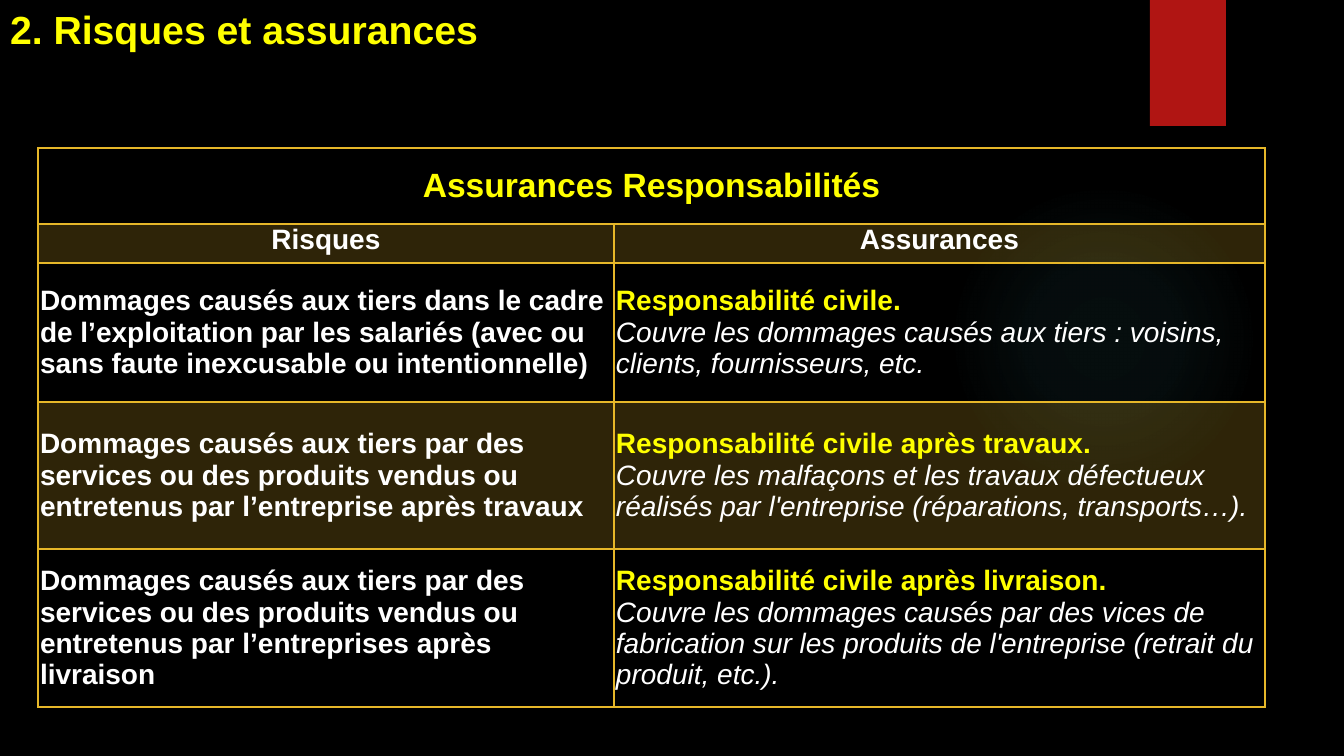
import pptx
import pptx.util
import pptx.dml.color
import pptx.enum.shapes
import pptx.enum.text
import pptx.oxml
import pptx.oxml.ns

PX = 914400 / 100.8
HUE = {"back": "000000", "glow": "50B9C1", "red": "B01513",
       "gold": "E6B729", "head": "FFFF00", "text": "FFFFFF"}
FONT = "Arial"
NS = pptx.oxml.ns.nsdecls("a")
ALIGN = pptx.enum.text.PP_ALIGN
ANCHOR = pptx.enum.text.MSO_ANCHOR
KIND = pptx.enum.shapes.MSO_SHAPE


def px(*nums):
    return [pptx.util.Emu(round(n * PX)) for n in nums]


def write(para, text, size, hue, bold=True):
    """Add one run; text that is not bold is italic."""
    run = para.add_run()
    run.text = text
    font = run.font
    font.name, font.size = FONT, pptx.util.Pt(size)
    font.bold, font.italic = bold, not bold
    font.color.rgb = pptx.dml.color.RGBColor.from_string(HUE[hue])


deck = pptx.Presentation()
deck.slide_width, deck.slide_height = px(1344, 756)
slide = deck.slides.add_slide(deck.slide_layouts[5])
shapes = slide.shapes
slide.background.fill.solid()
slide.background.fill.fore_color.rgb = pptx.dml.color.RGBColor.from_string(HUE["back"])

# Backdrop: soft glow and red tab
glow = shapes.add_shape(KIND.OVAL, *px(949, 184, 310, 310))
tab = shapes.add_shape(KIND.RECTANGLE, *px(1150, 0, 76, 126))
for shape in (glow, tab):
    shape.shadow.inherit = False
    shape.line.fill.background()
tab.fill.solid()
tab.fill.fore_color.rgb = pptx.dml.color.RGBColor.from_string(HUE["red"])
stops = "".join(
    f'<a:gs pos="{pos}000"><a:srgbClr val="{HUE["glow"]}">'
    f'<a:alpha val="{alpha}000"/></a:srgbClr></a:gs>'
    for pos, alpha in ((0, 7), (36, 6), (69, 0)))
fade = pptx.oxml.parse_xml(
    f'<a:gradFill {NS} rotWithShape="1"><a:gsLst>{stops}</a:gsLst><a:path path="circle">'
    '<a:fillToRect l="50000" t="50000" r="50000" b="50000"/></a:path></a:gradFill>')
glow.element.spPr.find(pptx.oxml.ns.qn("a:prstGeom")).addnext(fade)

# Title
title = shapes.title
title.left, title.top, title.width, title.height = px(0, 0, 644, 57)
frame = title.text_frame
frame.word_wrap = True
frame.auto_size = pptx.enum.text.MSO_AUTO_SIZE.NONE
frame.vertical_anchor = ANCHOR.TOP
frame.paragraphs[0].alignment = ALIGN.LEFT
write(frame.paragraphs[0], "2. Risques et assurances", 28, "head")

# Each cell is a list of paragraphs: text, size, colour, bold
rows = [
    [[("Assurances Responsabilités", 24, "head", True)], []],
    [[("Risques", 20, "text", True)], [("Assurances", 20, "text", True)]],
]
covers = [
    ("Dommages causés aux tiers dans le cadre de l’exploitation par les salariés "
     "(avec ou sans faute inexcusable ou intentionnelle)",
     "Responsabilité civile.",
     "Couvre les dommages causés aux tiers : voisins, clients, fournisseurs, etc."),
    ("Dommages causés aux tiers par des services ou des produits vendus ou "
     "entretenus par l’entreprise après travaux",
     "Responsabilité civile après travaux.",
     "Couvre les malfaçons et les travaux défectueux réalisés par l'entreprise "
     "(réparations, transports…)."),
    ("Dommages causés aux tiers par des services ou des produits vendus ou "
     "entretenus par l’entreprises après livraison",
     "Responsabilité civile après livraison.",
     "Couvre les dommages causés par des vices de fabrication sur les produits "
     "de l'entreprise (retrait du produit, etc.)."),
]
for risk, name, scope in covers:
    rows.append([[(risk, 20, "text", True)],
                 [(name, 20, "head", True), (scope, 20, "text", False)]])

# Table
table = shapes.add_table(5, 2, *px(38, 148, 1227, 559)).table
table.first_row = table.horz_banding = False
for col, width in zip(table.columns, px(576, 651)):
    col.width = width
for row, height in zip(table.rows, px(76, 39, 139, 147, 158)):
    row.height = height
table.cell(0, 0).merge(table.cell(0, 1))

for r, row in enumerate(rows):
    for c, paras in enumerate(row):
        cell = table.cell(r, c)
        cell.margin_left, cell.margin_right = px(2, 2)
        cell.margin_top = cell.margin_bottom = 0
        cell.vertical_anchor = ANCHOR.TOP if r == 1 else ANCHOR.MIDDLE
        props = cell._tc.get_or_add_tcPr()
        for side in "LRTB":
            thick = 2 if (r, side) in ((0, "B"), (1, "T")) else 1
            props.append(pptx.oxml.parse_xml(
                f'<a:ln{side} {NS} w="{thick * 12700}"><a:solidFill>'
                f'<a:srgbClr val="{HUE["gold"]}"/></a:solidFill></a:ln{side}>'))
        if r % 2:
            cell.fill.solid()
            cell.fill.fore_color.rgb = pptx.dml.color.RGBColor.from_string(HUE["gold"])
            tint = props.find(pptx.oxml.ns.qn("a:solidFill"))[0]
            tint.append(pptx.oxml.parse_xml(f'<a:alpha {NS} val="20000"/>'))
        else:
            cell.fill.background()
        for i, bits in enumerate(paras):
            frame = cell.text_frame
            para = frame.add_paragraph() if i else frame.paragraphs[0]
            para.alignment = ALIGN.CENTER if r < 2 else ALIGN.LEFT
            write(para, *bits)

deck.save("out.pptx")
